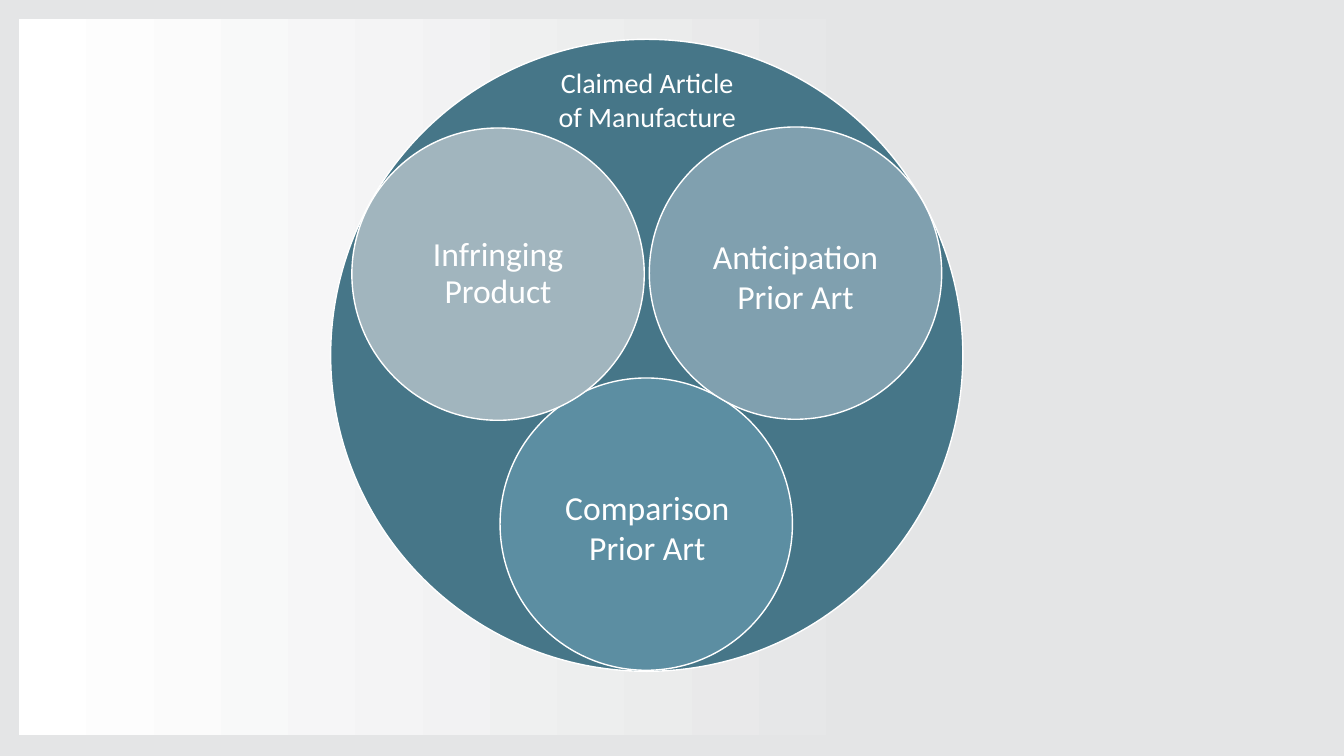
from pptx import Presentation
from pptx.dml.color import RGBColor
from pptx.enum.shapes import MSO_SHAPE as Shape
from pptx.enum.text import MSO_ANCHOR as Anchor, PP_ALIGN as Align
from pptx.util import Inches, Pt

WIDTH, HEIGHT = 13.33, 7.5
BACKDROP, WHITE = "E4E5E6", "FFFFFF"
MARGIN = 0.19
SMALL = 2.9
CIRCLES = [
    (3.28, 0.39, 6.27, "467688"),
    (4.96, 3.75, SMALL, "5C8EA2"),
    (6.44, 1.26, SMALL, "80A0AF"),
]
LABELS = [
    ("Claimed Article of Manufacture", 5.4, 0.6, 2.04, 0.77, 20),
    ("Anticipation\vPrior Art", 6.36, 2.29, 3.06, 0.91, 24),
    ("Comparison\vPrior Art", 4.96, 4.78, 2.92, 0.91, 24),
]


def paint(color_format, value):
    color_format.rgb = RGBColor.from_string(value)


def box(*lengths):
    return [Inches(length) for length in lengths]


def write(shape, text, size, **frame_format):
    frame = shape.text_frame
    for name, value in {"word_wrap": True, **frame_format}.items():
        setattr(frame, name, value)
    frame.text = text
    paragraph = frame.paragraphs[0]
    paragraph.alignment = Align.CENTER
    for run in paragraph.runs:
        for name, value in {"name": "Calibri", "size": Pt(size)}.items():
            setattr(run.font, name, value)
        paint(run.font.color, WHITE)
    return paragraph


def add_panel(slide):
    panel = slide.shapes.add_shape(
        Shape.RECTANGLE, *box(MARGIN, MARGIN, WIDTH - MARGIN, 7.1))
    panel.shadow.inherit = False
    panel.line.fill.background()
    panel.fill.gradient()
    panel.fill.gradient_angle = 0
    stops = panel.fill.gradient_stops
    for stop, (position, color) in zip(stops, [(0, WHITE), (0.66, BACKDROP)]):
        stop.position = position
        paint(stop.color, color)


def add_circle(slide, left, top, diameter, color):
    circle = slide.shapes.add_shape(
        Shape.OVAL, *box(left, top, diameter, diameter))
    circle.shadow.inherit = False
    circle.fill.solid()
    paint(circle.fill.fore_color, color)
    paint(circle.line.color, WHITE)
    circle.line.width = Pt(1)
    return circle


def add_label(slide, text, left, top, width, height, size):
    label = slide.shapes.add_textbox(*box(left, top, width, height))
    write(label, text, size)


def main():
    presentation = Presentation()
    presentation.slide_width, presentation.slide_height = box(WIDTH, HEIGHT)
    slide = presentation.slides.add_slide(presentation.slide_layouts[6])
    slide.background.fill.solid()
    paint(slide.background.fill.fore_color, BACKDROP)
    add_panel(slide)
    for circle in CIRCLES:
        add_circle(slide, *circle)
    product = add_circle(slide, 3.49, 1.27, SMALL, "A1B5BE")
    paragraph = write(product, "Infringing Product", 24,
                      vertical_anchor=Anchor.MIDDLE,
                      margin_left=Inches(0.18), margin_right=Inches(0.18))
    paragraph.line_spacing = 0.9
    for label in LABELS:
        add_label(slide, *label)
    presentation.save("out.pptx")


if __name__ == "__main__":
    main()
